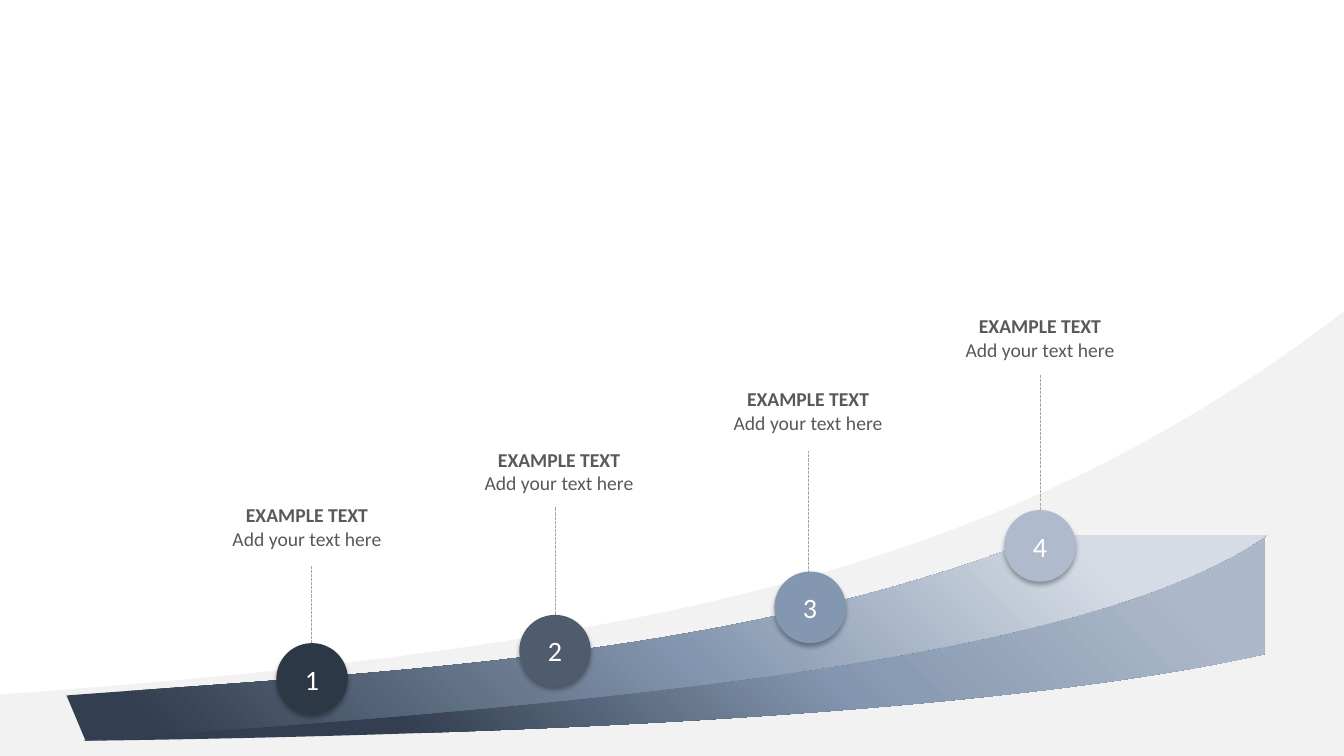
from copy import deepcopy

from lxml import etree
from pptx import Presentation
from pptx.dml.color import RGBColor
from pptx.enum.dml import MSO_LINE
from pptx.enum.shapes import MSO_CONNECTOR, MSO_SHAPE
from pptx.enum.text import MSO_ANCHOR, MSO_AUTO_SIZE, PP_ALIGN
from pptx.oxml import parse_xml
from pptx.oxml.ns import nsdecls, qn
from pptx.util import Inches, Pt

STRAIGHT = MSO_CONNECTOR.STRAIGHT
OVAL = MSO_SHAPE.OVAL
SQUARE_DOT = MSO_LINE.SQUARE_DOT
CENTER = PP_ALIGN.CENTER
MIDDLE = MSO_ANCHOR.MIDDLE
GROW = MSO_AUTO_SIZE.SHAPE_TO_FIT_TEXT

WHITE = RGBColor(0xFF, 0xFF, 0xFF)
HILL_GRAY = RGBColor(0xF2, 0xF2, 0xF2)
TEXT_GRAY = RGBColor(0x59, 0x59, 0x59)
LINE_GRAY = RGBColor(0xA6, 0xA6, 0xA6)
NAVY = RGBColor(0x33, 0x3F, 0x50)
STEEL = RGBColor(0x84, 0x97, 0xB0)
MIST = RGBColor(0xAD, 0xB9, 0xCA)
PALE = RGBColor(0xD6, 0xDC, 0xE5)
STEP_1 = RGBColor(0x2D, 0x38, 0x47)
STEP_2 = RGBColor(0x4F, 0x5C, 0x6D)
STEP_4 = RGBColor(0xAF, 0xBB, 0xCC)

FONT = "Calibri"
CIRCLE_SIZE = 0.71
LABEL_WIDTH = 2.25
LABEL_HEIGHT = 0.57
SHADOW = (
    f'<a:outerShdw {nsdecls("a")} blurRad="{Pt(3.5)}" dist="{Pt(2.2)}" '
    'dir="5400000" algn="t" rotWithShape="0">'
    '<a:srgbClr val="000000"><a:alpha val="32000"/></a:srgbClr></a:outerShdw>'
)


def bend_lines(shape, segments):
    lines = iter(shape.element.spPr.findall(f".//{qn('a:lnTo')}"))
    for segment in segments:
        first, *others = [next(lines) for _ in segment]
        if others:
            first.tag = qn("a:cubicBezTo")
        for line in others:
            first.append(line[0])
            line.getparent().remove(line)


def add_outline(shapes, start, segments):
    builder = shapes.build_freeform(Inches(start[0]), Inches(start[1]))
    corners = [(Inches(x), Inches(y)) for segment in segments for x, y in segment]
    builder.add_line_segments(corners, close=True)
    shape = builder.convert_to_shape()
    bend_lines(shape, segments)
    shape.shadow.inherit = False
    shape.line.fill.background()
    return shape


def add_hill(page):
    hill = add_outline(page.shapes, (13.33, 7.5), [
        [(13.33, 3.09)],
        [(9.96, 5.67), (6.36, 6.43), (0, 6.89)],
        [(0, 7.5)],
    ])
    hill.fill.solid()
    hill.fill.fore_color.rgb = HILL_GRAY


def add_ribbon(group, start, segments, stops):
    ribbon = add_outline(group.shapes, start, segments)
    ribbon.fill.gradient()
    ribbon.fill.gradient_angle = 45
    stop_list = ribbon.element.spPr.find(f".//{qn('a:gsLst')}")
    stop_list.append(deepcopy(stop_list[-1]))
    for stop, (position, color) in zip(ribbon.fill.gradient_stops, stops):
        stop.position = position
        stop.color.rgb = color


def add_road(page):
    road = page.shapes.add_group_shape()
    add_ribbon(road, (12.54, 6.49), [
        [(12.54, 5.31)],
        [(9.57, 6.66), (6.11, 6.91), (0.82, 7.35)],
        [(6.89, 7.27), (10.58, 6.93), (12.54, 6.49)],
    ], [(0.24, NAVY), (0.59, STEEL), (0.9, MIST)])
    add_ribbon(road, (0.66, 6.9), [
        [(3.73, 6.67), (7.29, 6.54), (10.38, 5.31)],
        [(12.56, 5.31)],
        [(10.65, 6.66), (5.11, 7.02), (0.85, 7.35)],
    ], [(0.07, NAVY), (0.51, STEEL), (0.86, PALE)])


def add_leader(page, x, bottom, top):
    leader = page.shapes.add_connector(
        STRAIGHT, Inches(x), Inches(bottom), Inches(x), Inches(top))
    leader.line.color.rgb = LINE_GRAY
    leader.line.width = Pt(0.75)
    leader.line.dash_style = SQUARE_DOT
    etree.SubElement(leader.element.spPr, qn("a:effectLst"))


def style_span(span, size, color, bold=False):
    span.font.name = FONT
    span.font.size = Pt(size)
    span.font.bold = bold
    span.font.color.rgb = color


def add_label(page, left, top):
    box = page.shapes.add_textbox(
        Inches(left), Inches(top), Inches(LABEL_WIDTH), Inches(LABEL_HEIGHT))
    frame = box.text_frame
    frame.word_wrap = True
    frame.auto_size = GROW
    para = frame.paragraphs[0]
    para.text = "EXAMPLE TEXT\vAdd your text here"
    para.alignment = CENTER
    heading, detail = para.runs
    style_span(heading, 14, TEXT_GRAY, bold=True)
    style_span(detail, 14, TEXT_GRAY)


def add_circle(page, number, left, top, color):
    circle = page.shapes.add_shape(
        OVAL, Inches(left), Inches(top), Inches(CIRCLE_SIZE), Inches(CIRCLE_SIZE))
    circle.fill.solid()
    circle.fill.fore_color.rgb = color
    circle.line.fill.background()
    circle.shadow.inherit = False
    circle.element.spPr.find(qn("a:effectLst")).append(parse_xml(SHADOW))
    frame = circle.text_frame
    frame.text = str(number)
    frame.vertical_anchor = MIDDLE
    para = frame.paragraphs[0]
    para.alignment = CENTER
    style_span(para.runs[0], 20, WHITE)


def main():
    deck = Presentation()
    deck.slide_width = Inches(13.33)
    deck.slide_height = Inches(7.5)
    page = deck.slides.add_slide(deck.slide_layouts[6])

    add_hill(page)
    add_road(page)

    leaders = [(3.09, 6.42, 5.61), (5.51, 6.22, 5.03),
               (8.02, 5.93, 4.47), (10.32, 5.18, 3.72)]
    labels = [(1.92, 4.94), (4.42, 4.39), (6.89, 3.79), (9.19, 3.07)]
    circles = [(2.74, 6.38, STEP_1), (5.15, 6.1, STEP_2),
               (7.68, 5.67, STEEL), (9.96, 5.06, STEP_4)]
    for leader in leaders:
        add_leader(page, *leader)
    for label in labels:
        add_label(page, *label)
    for number, circle in enumerate(circles, start=1):
        add_circle(page, number, *circle)

    deck.save("out.pptx")


if __name__ == "__main__":
    main()
